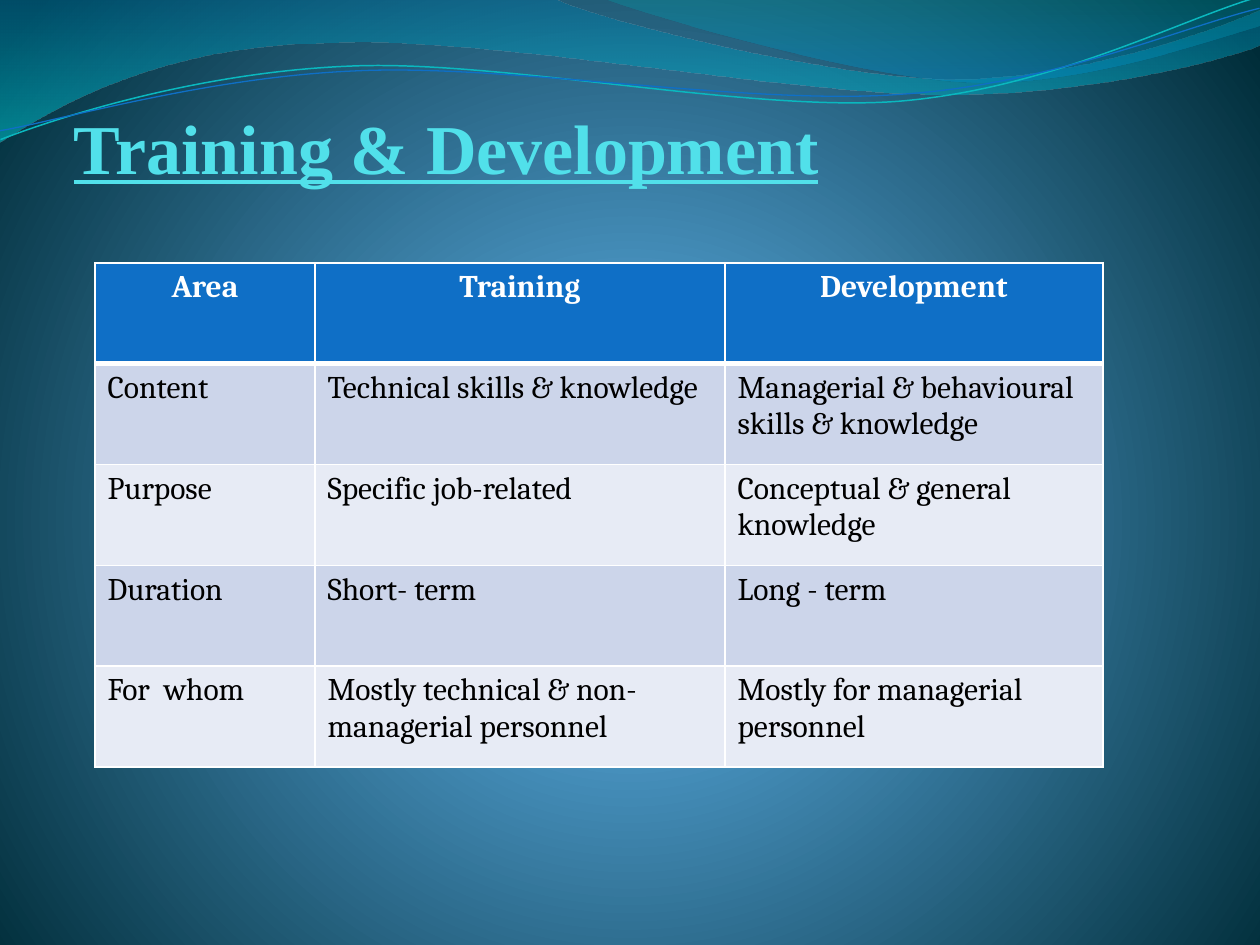
"""Build the Training & Development comparison slide."""
from lxml.etree import SubElement
from pptx import Presentation
from pptx.dml.color import RGBColor
from pptx.enum.text import MSO_ANCHOR, PP_ALIGN
from pptx.oxml import parse_xml
from pptx.oxml.ns import nsdecls, qn
from pptx.util import Emu, Pt

PX = 914400 / 126
WHITE = RGBColor(0xFF, 0xFF, 0xFF)
BLACK = RGBColor(0x00, 0x00, 0x00)
BLUE = RGBColor(0x0F, 0x6F, 0xC6)
TEAL = RGBColor(0x0A, 0xB8, 0xBF)
AQUA = RGBColor(0x51, 0xE0, 0xEA)
BAND_DARK = RGBColor(0xCC, 0xD5, 0xEA)
BAND_LIGHT = RGBColor(0xE7, 0xEB, 0xF5)
DOWN = '<a:lin ang="5400000" scaled="0"/>'
RADIAL = ('<a:path path="circle"><a:fillToRect l="10000" t="110000" '
          'r="10000" b="100000"/></a:path>')


def set_gradient(props, stops, direction):
    gs = "".join(
        f'<a:gs pos="{pos * 1000}"><a:srgbClr val="{color}">'
        f'<a:alpha val="{alpha * 1000}"/></a:srgbClr></a:gs>'
        for pos, color, alpha in stops)
    grad = parse_xml(f'<a:gradFill {nsdecls("a")} rotWithShape="1">'
                     f'<a:gsLst>{gs}</a:gsLst>{direction}</a:gradFill>')
    props.replace(props.find(qn("a:noFill")), grad)


def add_curve(start, segments, close):
    builder = slide.shapes.build_freeform(*start, scale=PX)
    builder.add_line_segments([pt for seg in segments for pt in seg], close=close)
    s = builder.convert_to_shape()
    lines = iter(s._element.findall(".//" + qn("a:lnTo")))
    for seg in segments:
        steps = [next(lines) for _ in seg]
        if len(seg) == 3:
            outline = steps[0].getparent()
            curve = SubElement(outline, qn("a:cubicBezTo"))
            outline.replace(steps[0], curve)
            for step in steps:
                curve.append(step[0])
            for step in steps[1:]:
                outline.remove(step)
    s.shadow.inherit = False
    s.fill.background()
    s.line.fill.background()
    return s


prs = Presentation()
prs.slide_width, prs.slide_height = Emu(round(1260 * PX)), Emu(round(945 * PX))
slide = prs.slides.add_slide(prs.slide_layouts[6])
slide.background.fill.background()
set_gradient(slide.background._cSld.find(".//" + qn("p:bgPr")),
             [(0, "4AA0D6", 100), (25, "4C98C7", 100), (100, "002C38", 100)], RADIAL)

waves = [
    ((0, 0),
     [[(554, -1)],
      [(600, 21), (837, 79), (955, 79)],
      [(1075, 79), (1207, 33), (1260, 11)],
      [(1261, 45)],
      [(1239, 55), (1096, 96), (940, 94)],
      [(784, 94), (481, 35), (324, 43)],
      [(163, 45), (58, 105), (-1, 142)]],
     [(0, "0074A1", 45), (100, "00C6CF", 55)]),
    ((604, -1),
     [[(641, 14), (859, 78), (969, 82)],
      [(1079, 87), (1211, 40), (1260, 26)],
      [(1260, 0)]],
     [(0, "00A1A9", 30), (80, "008BBF", 45)]),
]
for start, segments, stops in waves:
    s = add_curve(start, segments, True)
    set_gradient(s._element.spPr, stops, DOWN)

strands = [
    ((-2, 110),
     [[(58, 90), (199, 52), (350, 53)],
      [(499, 53), (745, 118), (896, 114)],
      [(1049, 109), (1184, 45), (1260, 27)]], TEAL, 0.85),
    ((-2, 101),
     [[(57, 94), (207, 57), (357, 58)],
      [(509, 58), (750, 112), (902, 107)],
      [(1052, 104), (1188, 52), (1262, 38)]], BLUE, 0.75),
]
for start, segments, color, width in strands:
    s = add_curve(start, segments, False)
    s.rotation = 357.3
    s.line.color.rgb = color
    s.line.width = Pt(width)

title = slide.shapes.add_textbox(*(Emu(round(v * PX)) for v in (74, 84, 1082, 104)))
tf = title.text_frame
tf.word_wrap = True
tf.vertical_anchor = MSO_ANCHOR.BOTTOM
tf.margin_left = tf.margin_top = tf.margin_bottom = 0
tf.margin_right = Emu(round(3 * PX))
p = tf.paragraphs[0]
p.text = "Training & Development"
p.alignment = PP_ALIGN.JUSTIFY
p.font.name, p.font.size = "Times New Roman", Pt(40)
p.font.bold = p.font.underline = True
p.font.color.rgb = AQUA

rows = [
    ("Area", "Training", "Development"),
    ("Content", "Technical skills & knowledge", "Managerial & behavioural skills & knowledge"),
    ("Purpose", "Specific job-related", "Conceptual & general knowledge"),
    ("Duration", "Short- term", "Long - term"),
    ("For  whom", "Mostly technical & non- managerial personnel", "Mostly for managerial personnel"),
]
frame = slide.shapes.add_table(
    len(rows), 3, *(Emu(round(v * PX)) for v in (95, 263, 1008, 504)))
table = frame.table
for column, width in zip(table.columns, (220, 410, 378)):
    column.width = Emu(round(width * PX))
for i, row in enumerate(rows):
    header = i == 0
    for j, text in enumerate(row):
        cell = table.cell(i, j)
        for side in ("L", "R", "T", "B"):
            thick = (header and side == "B") or (i == 1 and side == "T")
            cell._tc.get_or_add_tcPr().append(parse_xml(
                f'<a:ln{side} {nsdecls("a")} w="{Pt(3 if thick else 1)}"><a:solidFill>'
                f'<a:srgbClr val="{WHITE}"/></a:solidFill></a:ln{side}>'))
        cell.fill.solid()
        cell.fill.fore_color.rgb = BLUE if header else (BAND_LIGHT, BAND_DARK)[i % 2]
        p = cell.text_frame.paragraphs[0]
        p.text = text
        p.alignment = PP_ALIGN.CENTER if header else PP_ALIGN.LEFT
        p.font.name, p.font.size = "Cambria", Pt(18)
        p.font.bold = header
        p.font.color.rgb = WHITE if header else BLACK

prs.save("out.pptx")
